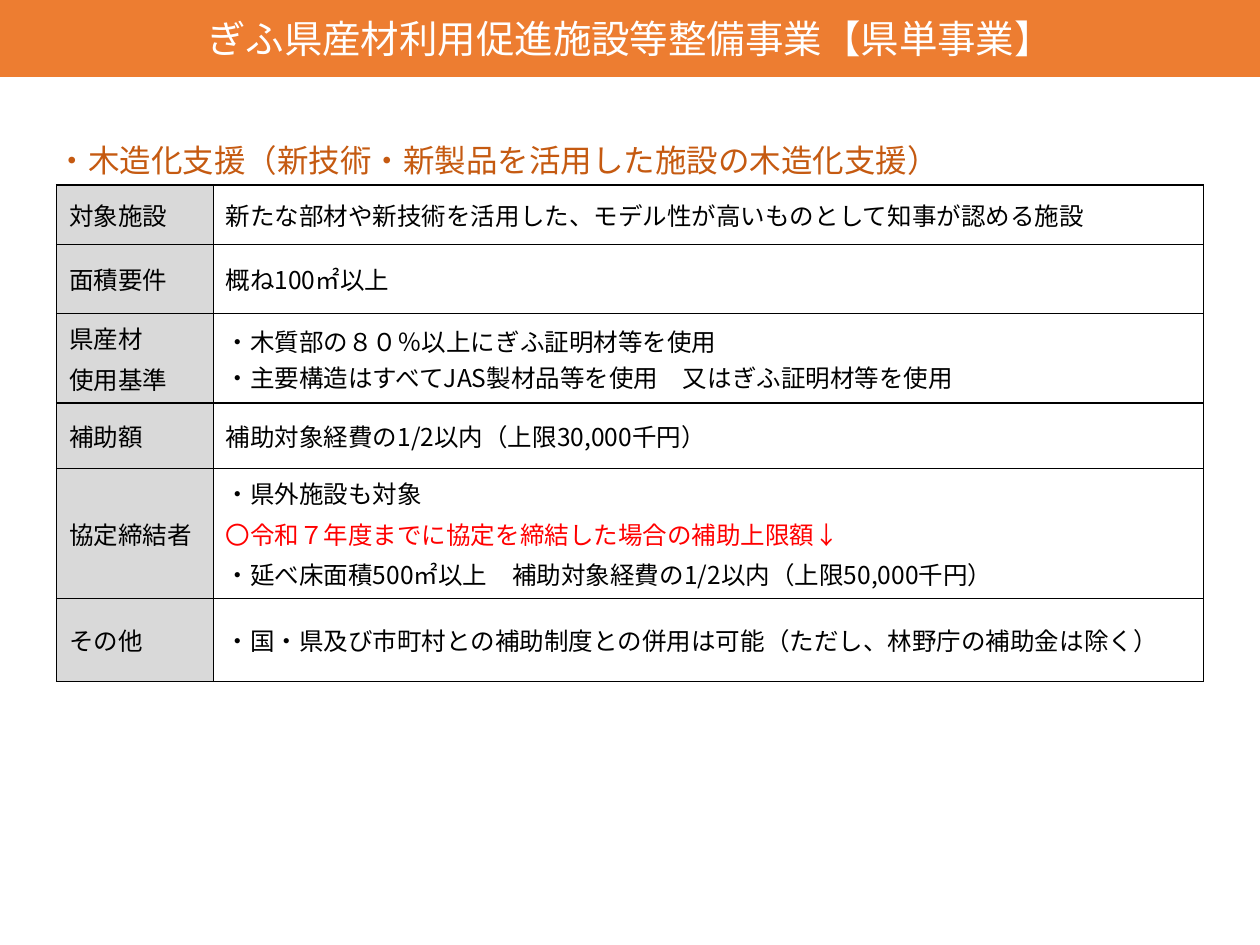
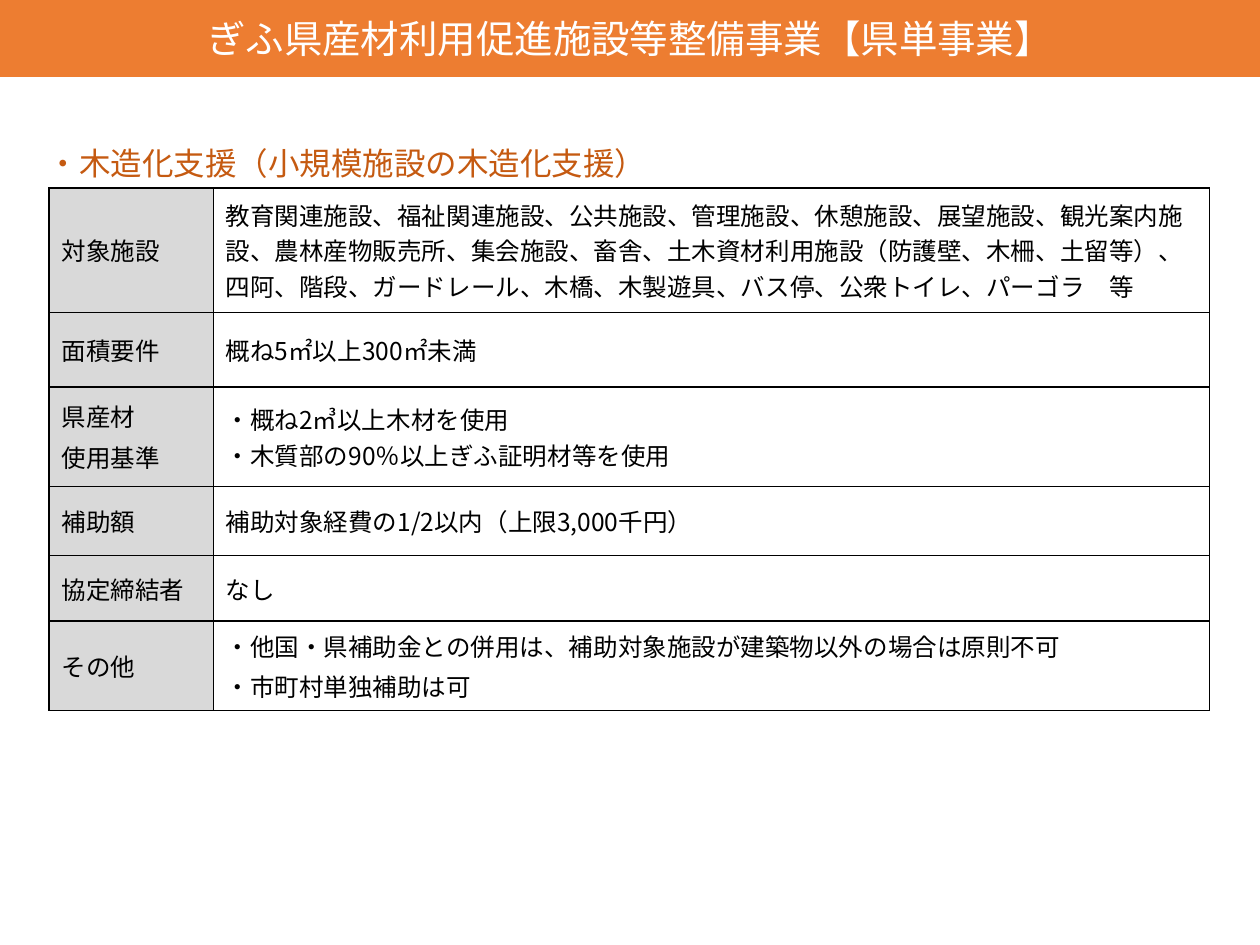
from lxml import etree
from pptx import Presentation
from pptx.dml.color import RGBColor
from pptx.enum.lang import MSO_LANGUAGE_ID
from pptx.enum.shapes import MSO_SHAPE
from pptx.enum.text import MSO_ANCHOR, PP_ALIGN
from pptx.oxml.ns import qn
from pptx.util import Inches, Pt

ORANGE = RGBColor(0xED, 0x7D, 0x31)
RUST = RGBColor(0xC5, 0x5A, 0x11)
GRAY = RGBColor(0xD9, 0xD9, 0xD9)
BLACK = RGBColor(0, 0, 0)
RED = RGBColor(0xFF, 0, 0)
WHITE = RGBColor(0xFF, 0xFF, 0xFF)
RECT = MSO_SHAPE.RECTANGLE
MIDDLE = MSO_ANCHOR.MIDDLE
CENTER = PP_ALIGN.CENTER
JAPANESE = MSO_LANGUAGE_ID.JAPANESE
FONT = "Noto Sans CJK JP"
TITLE = "ぎふ県産材利用促進施設等整備事業【県単事業】"
LABELS = [["対象施設"], ["面積要件"], ["県産材", "使用基準"],
          ["補助額"], ["協定締結者"], ["その他"]]
TIGHT = 2

PAGES = [
    {
        "head": "・木造化支援（新技術・新製品を活用した施設の木造化支援）",
        "spot": (0.35, 1.07, 8.11),
        "grid": (0.45, 1.47),
        "cols": (1.24, 7.86),
        "rows": (0.47, 0.55, 0.71, 0.52, 1.03, 0.66),
        "texts": [
            ["新たな部材や新技術を活用した、モデル性が高いものとして知事が認める施設"],
            ["概ね100㎡以上"],
            ["・木質部の８０％以上にぎふ証明材等を使用",
             "・主要構造はすべてJAS製材品等を使用　又はぎふ証明材等を使用"],
            ["補助対象経費の1/2以内（上限30,000千円）"],
            ["・県外施設も対象",
             "〇令和７年度までに協定を締結した場合の補助上限額↓",
             "・延べ床面積500㎡以上　補助対象経費の1/2以内（上限50,000千円）"],
            ["・国・県及び市町村との補助制度との併用は可能（ただし、林野庁の補助金は除く）"],
        ],
    },
    {
        "head": "・木造化支援（小規模施設の木造化支援）",
        "spot": (0.28, 1.09, 6.77),
        "grid": (0.39, 1.49),
        "cols": (1.3, 7.91),
        "rows": (0.99, 0.59, 0.79, 0.55, 0.52, 0.71),
        "texts": [
            ["教育関連施設、福祉関連施設、公共施設、管理施設、休憩施設、展望施設、"
             "観光案内施設、農林産物販売所、集会施設、畜舎、土木資材利用施設"
             "（防護壁、木柵、土留等）、四阿、階段、ガードレール、木橋、木製遊具、"
             "バス停、公衆トイレ、パーゴラ　等"],
            ["概ね5㎡以上300㎡未満"],
            ["・概ね2㎥以上木材を使用", "・木質部の90％以上ぎふ証明材等を使用"],
            ["補助対象経費の1/2以内（上限3,000千円）"],
            ["なし"],
            ["・他国・県補助金との併用は、補助対象施設が建築物以外の場合は原則不可",
             "・市町村単独補助は可"],
        ],
    },
]


def write(frame, lines, size, color, gap=0):
    for i, line in enumerate(lines):
        para = frame.add_paragraph() if i else frame.paragraphs[0]
        if i and gap:
            para.space_before = Pt(gap)
        run = para.add_run()
        run.text = line
        font = run.font
        font.size = Pt(size)
        font.color.rgb = RED if line.startswith("〇") else color
        font.name = FONT
        font.language_id = JAPANESE
        etree.SubElement(run._r.rPr, qn("a:ea"), typeface=FONT)


def edge(cell, widths):
    props = cell._tc.get_or_add_tcPr()
    for side, width in zip("LRTB", widths):
        line = etree.SubElement(props, qn("a:ln" + side), w=str(Pt(width)))
        fill = etree.SubElement(line, qn("a:solidFill"))
        etree.SubElement(fill, qn("a:srgbClr"), val=str(BLACK))


deck = Presentation()
deck.slide_width = Inches(10)
deck.slide_height = Inches(7.5)

for page in PAGES:
    slide = deck.slides.add_slide(deck.slide_layouts[6])

    left, top = page["grid"]
    cols, rows = page["cols"], page["rows"]
    frame = slide.shapes.add_table(
        len(rows), len(cols), Inches(left), Inches(top),
        Inches(sum(cols)), Inches(sum(rows)))
    table = frame.table
    table.first_row = False
    table.horz_banding = False
    for col, width in zip(table.columns, cols):
        col.width = Inches(width)
    for r, height in enumerate(rows):
        table.rows[r].height = Inches(height)
        for c, lines in enumerate((LABELS[r], page["texts"][r])):
            cell = table.cell(r, c)
            cell.vertical_anchor = MIDDLE
            edge(cell, (0.5, 1, 1, 1) if c else (1, 0.5, 1, 1))
            if c:
                cell.fill.background()
            else:
                cell.fill.solid()
                cell.fill.fore_color.rgb = GRAY
            gap = 0 if c and r == TIGHT else 2.8
            write(cell.text_frame, lines, 14, BLACK, gap)

    band = slide.shapes.add_shape(RECT, 0, 0, Inches(10), Inches(0.61))
    band.shadow.inherit = False
    band.fill.solid()
    band.fill.fore_color.rgb = ORANGE
    band.line.fill.background()
    band.text_frame.vertical_anchor = MIDDLE
    write(band.text_frame, [TITLE], 22, WHITE)
    band.text_frame.paragraphs[0].alignment = CENTER

    left, top, width = page["spot"]
    box = slide.shapes.add_textbox(
        Inches(left), Inches(top), Inches(width), Inches(0.4))
    box.text_frame.word_wrap = True
    write(box.text_frame, [page["head"]], 18, RUST)

deck.save("out.pptx")
